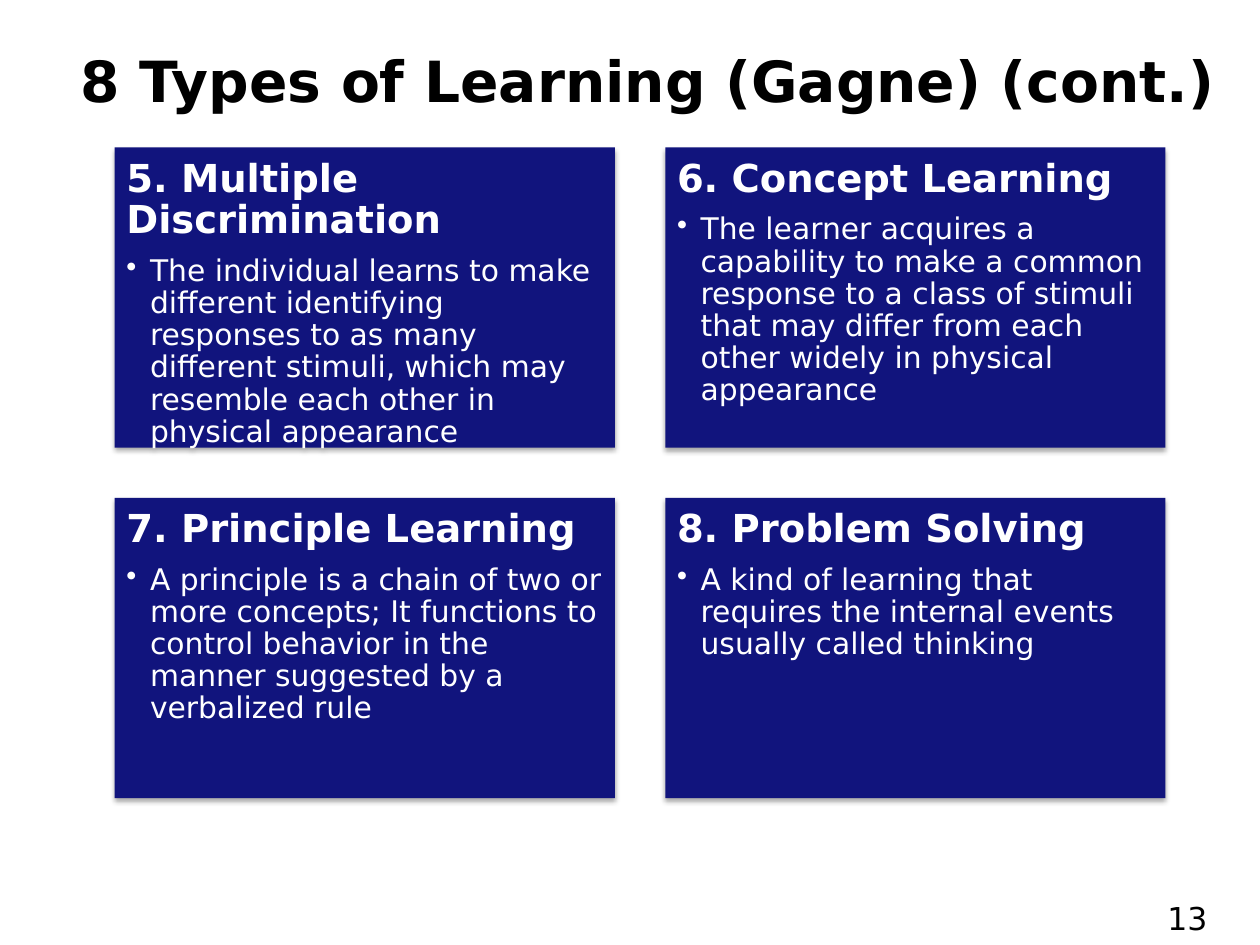
from dataclasses import dataclass

from lxml import etree
from pptx import Presentation
from pptx.dml.color import RGBColor
from pptx.enum.shapes import MSO_SHAPE
from pptx.enum.text import MSO_ANCHOR, PP_ALIGN
from pptx.oxml.ns import qn
from pptx.util import Pt

RECT = MSO_SHAPE.RECTANGLE
TOP = MSO_ANCHOR.TOP
MID = MSO_ANCHOR.MIDDLE
LEFT = PP_ALIGN.LEFT


@dataclass(frozen=True)
class Theme:
    font: str = "DejaVu Sans"
    ink: str = "000000"
    navy: str = "11147D"
    white: str = "FFFFFF"
    title: float = 32.4
    head: float = 22
    body: float = 17
    page: float = 18


@dataclass(frozen=True)
class Box:
    left: float
    top: float
    width: float
    height: float


@dataclass(frozen=True)
class Card:
    head: str
    body: str


THEME = Theme()
FIRST = Box(65.6, 84.3, 285.8, 171.5)
GAP = 28.8
COLS = 2
PAD = 6.7
HANG = 13.5
CARDS = [
    Card("5. Multiple Discrimination",
         "The individual learns to make different identifying responses to as "
         "many different stimuli, which may resemble each other in physical "
         "appearance"),
    Card("6. Concept Learning",
         "The learner acquires a capability to make a common response to a "
         "class of stimuli that may differ from each other widely in physical "
         "appearance"),
    Card("7. Principle Learning",
         "A principle is a chain of two or more concepts; It functions to "
         "control behavior in the manner suggested by a verbalized rule"),
    Card("8. Problem Solving",
         "A kind of learning that requires the internal events usually called "
         "thinking"),
]


def place(box: Box) -> tuple:
    return Pt(box.left), Pt(box.top), Pt(box.width), Pt(box.height)


def style(para, size: float, color: str, bold: bool = False) -> None:
    para.alignment = LEFT
    for run in para.runs:
        font = run.font
        font.name = THEME.font
        font.size = Pt(size)
        font.bold = bold
        font.color.rgb = RGBColor.from_string(color)


def indent(para, left: float, first: float = 0) -> None:
    props = para._p.get_or_add_pPr()
    props.set("marL", str(Pt(left)))
    props.set("indent", str(Pt(first)))


def shade(shape) -> None:
    shape.shadow.inherit = False
    effects = shape._element.spPr.find(qn("a:effectLst"))
    outer = etree.SubElement(
        effects, qn("a:outerShdw"), blurRad=str(Pt(3.1)), dist=str(Pt(1.8)),
        dir="5400000", rotWithShape="0")
    color = etree.SubElement(outer, qn("a:srgbClr"), val=THEME.ink)
    etree.SubElement(color, qn("a:alpha"), val="35000")


def label(slide, box: Box, text: str, size: float, bold: bool = False,
          anchor=TOP, left: float = 0) -> None:
    frame = slide.shapes.add_textbox(*place(box)).text_frame
    frame.word_wrap = True
    frame.vertical_anchor = anchor
    frame.text = text
    para = frame.paragraphs[0]
    indent(para, left)
    style(para, size, THEME.ink, bold)


def panel(slide, box: Box, card: Card) -> None:
    shape = slide.shapes.add_shape(RECT, *place(box))
    shape.fill.solid()
    shape.fill.fore_color.rgb = RGBColor.from_string(THEME.navy)
    shape.line.fill.background()
    shade(shape)

    frame = shape.text_frame
    frame.word_wrap = True
    frame.vertical_anchor = TOP
    frame.margin_left = frame.margin_right = Pt(PAD)
    frame.margin_top = frame.margin_bottom = Pt(PAD)
    frame.text = card.head
    head = frame.paragraphs[0]
    head.line_spacing = 0.9
    head.space_after = Pt(THEME.head * 0.35)
    style(head, THEME.head, THEME.white, True)

    body = frame.add_paragraph()
    body.text = card.body
    body.level = 1
    indent(body, HANG, -HANG)
    etree.SubElement(body._p.get_or_add_pPr(), qn("a:buChar"), char="•")
    body.line_spacing = 0.9
    body.space_after = Pt(THEME.body * 0.15)
    style(body, THEME.body, THEME.white)


def main() -> None:
    deck = Presentation()
    deck.slide_width, deck.slide_height = Pt(720), Pt(540)
    slide = deck.slides.add_slide(deck.slide_layouts[6])
    label(slide, Box(24, 12.4, 684, 66), "8 Types of Learning (Gagne) (cont.)",
          THEME.title, True, MID, 15)
    for i, card in enumerate(CARDS):
        row, col = divmod(i, COLS)
        box = Box(FIRST.left + col * (FIRST.width + GAP),
                  FIRST.top + row * (FIRST.height + GAP),
                  FIRST.width, FIRST.height)
        panel(slide, box, card)
    label(slide, Box(660, 510, 60, 19.5), "13", THEME.page)
    deck.save("out.pptx")


if __name__ == "__main__":
    main()
